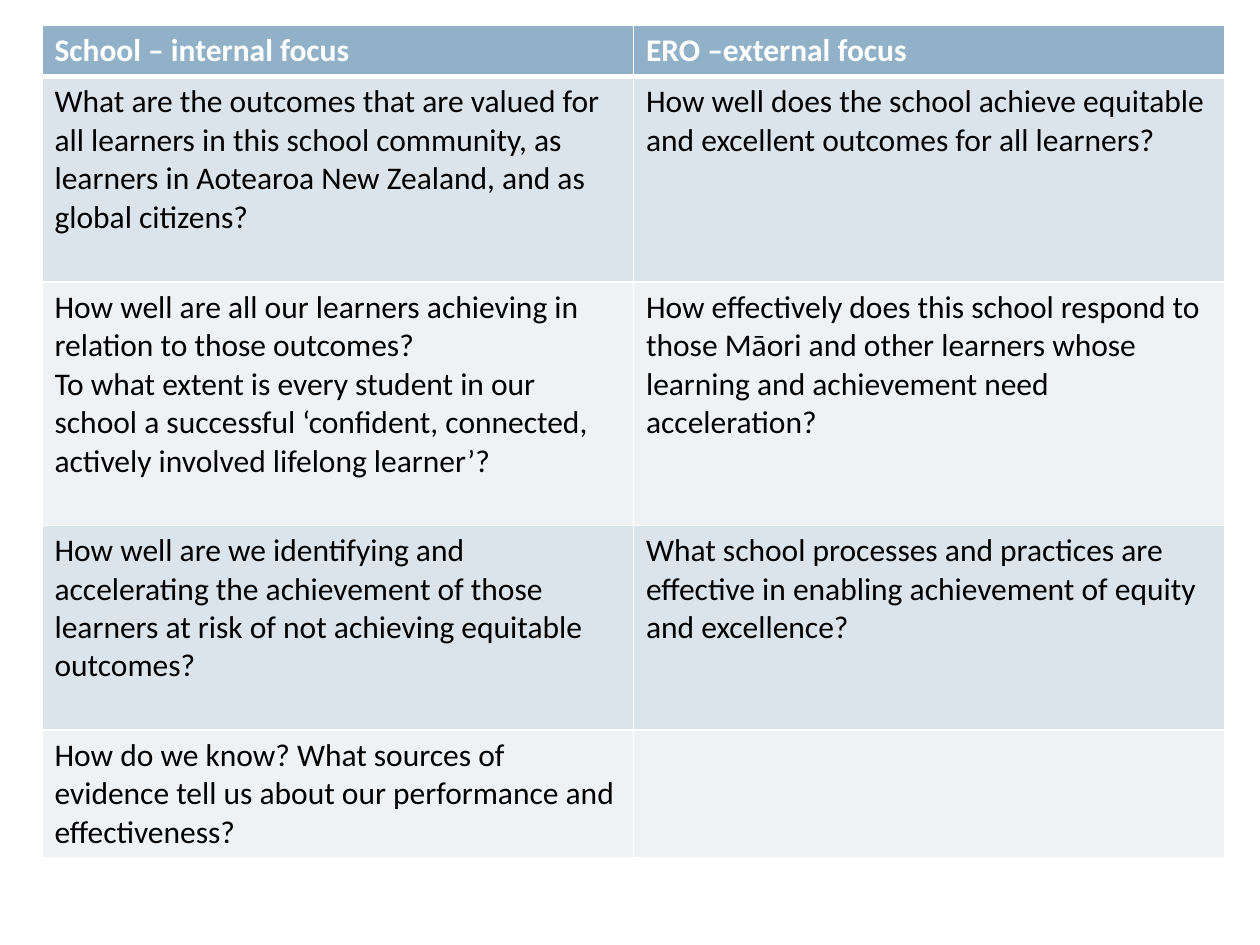
import pptx
import pptx.util
import pptx.dml.color
import lxml.etree as etree
from pptx.oxml.ns import qn

Pt = pptx.util.Pt
Color = pptx.dml.color.RGBColor
WHITE = Color(0xFF, 0xFF, 0xFF)
BLACK = Color(0x00, 0x00, 0x00)
BLUE = Color(0x90, 0xB1, 0xC8)
BANDS = [Color(0xEE, 0xF2, 0xF5), Color(0xDB, 0xE4, 0xEB)]

ROWS = [
    (28, "School – internal focus", "ERO –external focus"),
    (117.5,
     "What are the outcomes that are valued for all learners in this school "
     "community, as learners in Aotearoa New Zealand, and as global citizens?",
     "How well does the school achieve equitable and excellent outcomes for "
     "all learners?"),
    (139,
     "How well are all our learners achieving in relation to those outcomes?\n"
     "To what extent is every student in our school a successful ‘confident, "
     "connected, actively involved lifelong learner’?",
     "How effectively does this school respond to those Māori and other "
     "learners whose learning and achievement need acceleration?"),
    (117,
     "How well are we identifying and accelerating the achievement of those "
     "learners at risk of not achieving equitable outcomes?",
     "What school processes and practices are effective in enabling "
     "achievement of equity and excellence?"),
    (73,
     "How do we know? What sources of evidence tell us about our performance "
     "and effectiveness?",
     ""),
]


def edge(cell, side, width):
    """Draw one white border; side is L, R, T or B."""
    line = etree.SubElement(cell._tc.get_or_add_tcPr(), qn("a:ln" + side))
    line.set("w", str(Pt(width)))
    fill = etree.SubElement(line, qn("a:solidFill"))
    etree.SubElement(fill, qn("a:srgbClr")).set("val", str(WHITE))


deck = pptx.Presentation()
deck.slide_width, deck.slide_height = Pt(720), Pt(540)
slide = deck.slides.add_slide(deck.slide_layouts[6])

high = sum(row[0] for row in ROWS)
frame = slide.shapes.add_table(len(ROWS), 2, Pt(24), Pt(14.5), Pt(676), Pt(high))
table = frame.table

for r, (tall, *texts) in enumerate(ROWS):
    table.rows[r].height = Pt(tall)
    head = r == 0
    for c, text in enumerate(texts):
        cell = table.cell(r, c)
        edge(cell, "L", 1)
        edge(cell, "R", 1)
        edge(cell, "T", 3 if r == 1 else 1)
        edge(cell, "B", 3 if head else 1)
        cell.fill.solid()
        cell.fill.fore_color.rgb = BLUE if head else BANDS[r % 2]
        cell.text_frame.text = text
        for para in cell.text_frame.paragraphs:
            for run in para.runs:
                run.font.name = "Calibri"
                run.font.size = Pt(18)
                run.font.bold = head
                run.font.color.rgb = WHITE if head else BLACK

deck.save("out.pptx")
